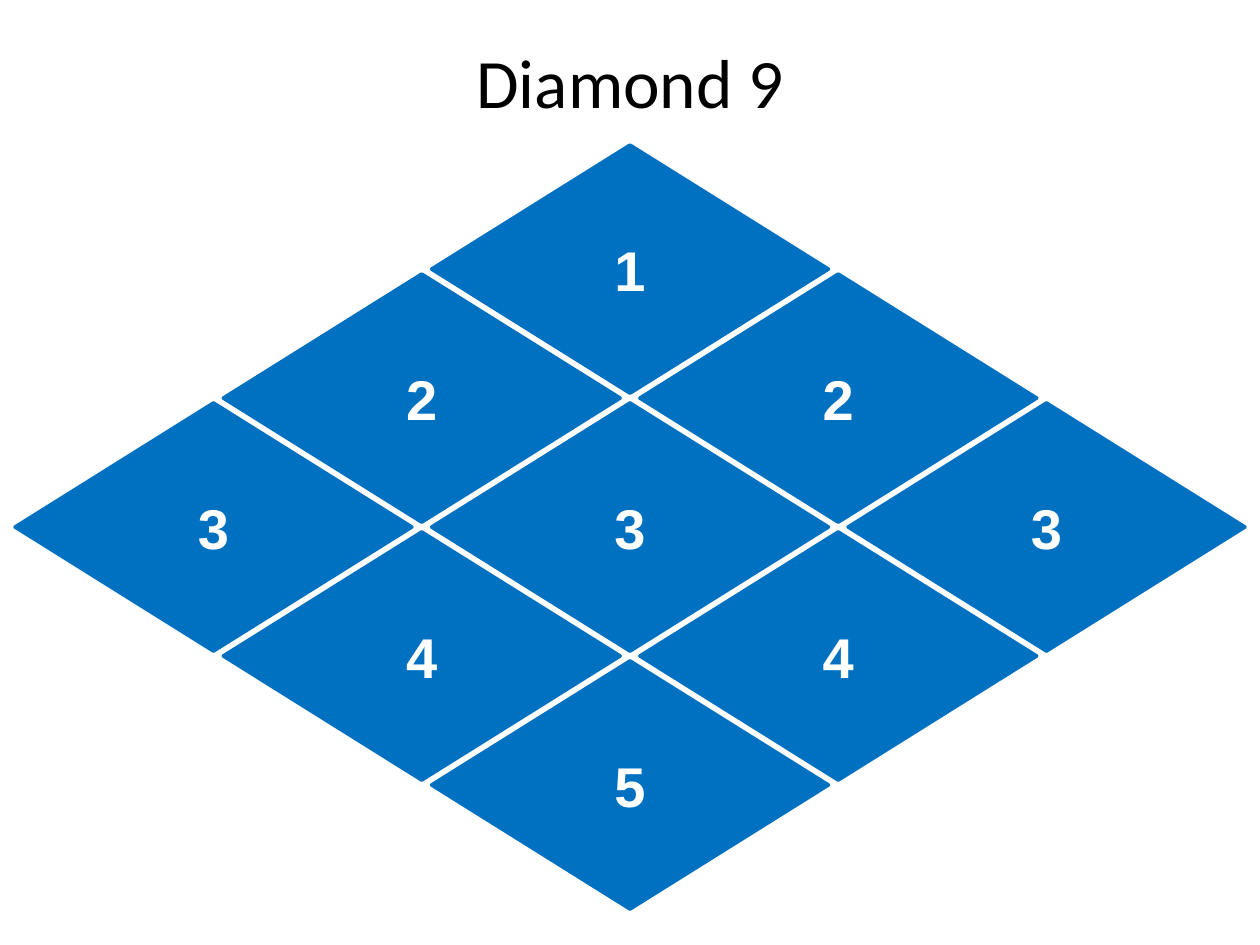
import itertools

import pptx
import pptx.dml.color
import pptx.enum.shapes
import pptx.enum.text
import pptx.util

Pt = pptx.util.Pt


def color(hex_text):
    return pptx.dml.color.RGBColor.from_string(hex_text)


class SlideBuilder:
    TITLE = {"name": "Calibri", "size": Pt(39.6), "bold": False}
    LABEL = {"name": "Arial", "size": Pt(32), "bold": True}
    FRAME = {
        "word_wrap": True,
        "vertical_anchor": pptx.enum.text.MSO_ANCHOR.MIDDLE,
        "margin_left": 0,
        "margin_right": 0,
        "margin_top": 0,
        "margin_bottom": 0,
    }
    BLUE, WHITE, BLACK = "0070C0", "FFFFFF", "000000"

    def __init__(self, slide):
        self.slide = slide

    def set_text(self, shape, text, font_format, font_color):
        """Put one centred paragraph into the shape."""
        frame = shape.text_frame
        for name, value in self.FRAME.items():
            setattr(frame, name, value)
        para = frame.paragraphs[0]
        para.alignment = pptx.enum.text.PP_ALIGN.CENTER
        span = para.add_run()
        span.text = text
        for name, value in font_format.items():
            setattr(span.font, name, value)
        span.font.color.rgb = color(font_color)

    def title(self, text, left, top, width, height):
        box = self.slide.shapes.add_textbox(Pt(left), Pt(top), Pt(width), Pt(height))
        self.set_text(box, text, self.TITLE, self.BLACK)

    def diamond(self, text, center_x, center_y, width, height):
        shape = self.slide.shapes.add_shape(
            pptx.enum.shapes.MSO_SHAPE.DIAMOND,
            Pt(center_x - width / 2), Pt(center_y - height / 2), Pt(width), Pt(height),
        )
        shape.shadow.inherit = False
        shape.fill.solid()
        shape.fill.fore_color.rgb = color(self.BLUE)
        shape.line.color.rgb = color(self.BLUE)
        shape.line.width = Pt(2)
        self.set_text(shape, text, self.LABEL, self.WHITE)


def main():
    deck = pptx.Presentation()
    deck.slide_width, deck.slide_height = Pt(720), Pt(540)
    builder = SlideBuilder(deck.slides.add_slide(deck.slide_layouts[6]))
    builder.title("Diamond 9", 36, 21.6, 648, 49)

    middle_x, top_center_y = 360, 153.8
    step_x, step_y = 119, 73.7
    for left_steps, right_steps in itertools.product(range(3), repeat=2):
        rank = left_steps + right_steps
        builder.diamond(
            str(rank + 1),
            middle_x + (right_steps - left_steps) * step_x,
            top_center_y + rank * step_y,
            226.8, 141.8,
        )
    deck.save("out.pptx")


if __name__ == "__main__":
    main()
